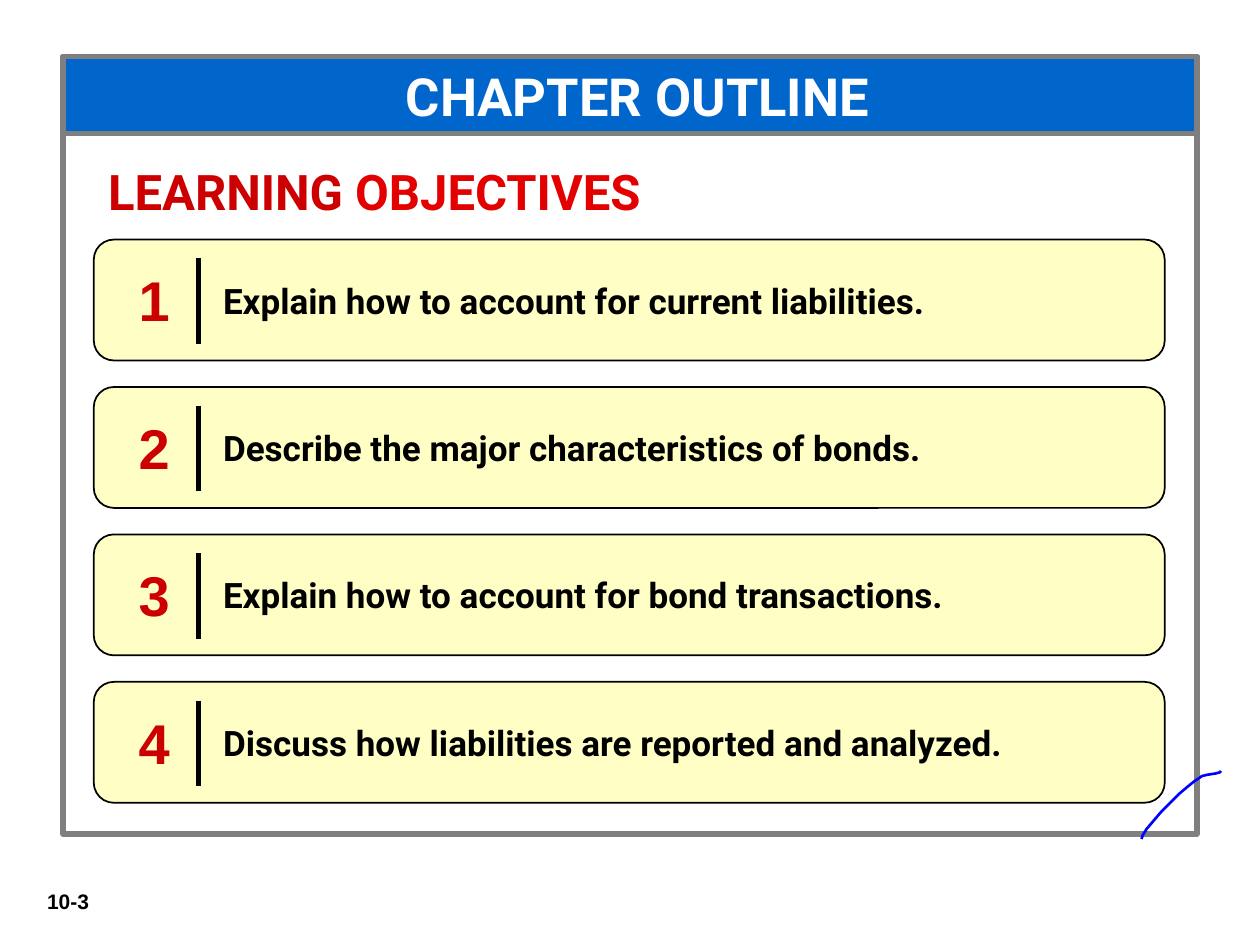
from lxml import etree
from pptx import Presentation
from pptx import util as u
from pptx.dml.color import RGBColor
from pptx.enum import shapes, text
from pptx.oxml.ns import qn

Pt = u.Pt
COLORS = {"black": "000000", "white": "FFFFFF", "blue": "0066CC", "gray": "7F7F7F",
          "cream": "FFFFC5", "red": "CC0000", "bright_red": "E20000", "ink": "0000FF"}
OBJECTIVES = ["Explain how to account for current liabilities.",
              "Describe the major characteristics of bonds.",
              "Explain how to account for bond transactions.",
              "Discuss how liabilities are reported and analyzed."]
STROKE = [(697.7, 440.6), (697, 441.4), (694.8, 442), (689.8, 442.8), (686.9, 443.5),
          (684.7, 445), (682.6, 446.4), (679, 449.3), (673.9, 453.6), (668.9, 458.6),
          (663.8, 463.7), (659.5, 468.7), (655.2, 473.8), (653, 477.4), (652.3, 479.5)]
FIRST_TOP, PITCH, CARD_HEIGHT = 136.9, 84.25, 69.1


def color(name):
    return RGBColor.from_string(COLORS[name])


def set_all(target, values):
    for attribute, value in values.items():
        setattr(target, attribute, value)


def paint(shape, fill, line, width):
    if fill:
        shape.fill.solid()
        shape.fill.fore_color.rgb = color(fill)
    else:
        shape.fill.background()
    shape.line.color.rgb = color(line)
    shape.line.width = Pt(width)


def write(shape, runs, size, font="Roboto", align=text.PP_ALIGN.LEFT, indent=0,
          anchor=text.MSO_ANCHOR.TOP):
    frame = shape.text_frame
    set_all(frame, {"word_wrap": True, "auto_size": text.MSO_AUTO_SIZE.NONE,
                    "vertical_anchor": anchor})
    paragraph = frame.paragraphs[0]
    paragraph.alignment = align
    if indent:
        set_all_xml = paragraph._p.get_or_add_pPr()
        set_all_xml.set("marL", str(Pt(indent)))
        set_all_xml.set("indent", "0")
    for words, tone in runs:
        run = paragraph.add_run()
        run.text = words
        set_all(run.font, {"name": font, "size": Pt(size), "bold": True})
        run.font.color.rgb = color(tone)


def add_label(slide, box, runs, size, **style):
    label = slide.shapes.add_textbox(*map(Pt, box))
    write(label, runs, size, **style)


def add_box(slide, kind, box, fill, line, width):
    panel = slide.shapes.add_shape(kind, *map(Pt, box))
    panel.shadow.inherit = False
    paint(panel, fill, line, width)
    return panel


def add_divider(slide, x, top, bottom):
    divider = slide.shapes.add_connector(shapes.MSO_CONNECTOR.STRAIGHT,
                                         Pt(x), Pt(top), Pt(x), Pt(bottom))
    divider.line.color.rgb = color("black")
    divider.line.width = Pt(3)
    etree.SubElement(divider._element.spPr, qn("a:effectLst"))


def add_objective(slide, number, objective):
    top = FIRST_TOP + (number - 1) * PITCH
    card = add_box(slide, shapes.MSO_SHAPE.ROUNDED_RECTANGLE,
                   (53.6, top, 612, CARD_HEIGHT), "cream", "black", 1)
    write(card, [(objective, "black")], 20, indent=63.4, anchor=text.MSO_ANCHOR.MIDDLE)
    add_divider(slide, 113.6, top + 10.7, top + 59.7)
    add_label(slide, (66.2, top + 11.5, 43.9, 46.1), [(str(number), "red")], 32,
              font="Arial", align=text.PP_ALIGN.CENTER)


def add_title(slide):
    title = slide.shapes.title
    set_all(title, {"left": Pt(36), "top": Pt(32.4), "width": Pt(648), "height": Pt(43.9)})
    paint(title, "blue", "gray", 3)
    write(title, [("CHAPTER OUTLINE", "white")], 30, align=text.PP_ALIGN.CENTER,
          indent=8.6, anchor=text.MSO_ANCHOR.MIDDLE)


def add_stroke(slide):
    points = [(Pt(x), Pt(y)) for x, y in STROKE]
    builder = slide.shapes.build_freeform(*points[0])
    builder.add_line_segments(points[1:], close=False)
    stroke = builder.convert_to_shape()
    stroke.shadow.inherit = False
    paint(stroke, None, "ink", 1.5)


def main():
    """Build the chapter outline slide."""
    deck = Presentation()
    set_all(deck, {"slide_width": Pt(720), "slide_height": Pt(540)})
    slide = deck.slides.add_slide(deck.slide_layouts[5])
    add_title(slide)
    add_box(slide, shapes.MSO_SHAPE.RECTANGLE, (36, 32.4, 648, 444.2), None, "gray", 3)
    add_label(slide, (46.1, 88.6, 408.2, 38.2),
              [("LEARNING", "red"), (" OBJECTIVES", "bright_red")], 28, indent=8.6)
    for number, objective in enumerate(OBJECTIVES, 1):
        add_objective(slide, number, objective)
    add_label(slide, (5.8, 504, 66.2, 21.6), [("10-3", "black")], 12,
              font="Arial", align=text.PP_ALIGN.CENTER, anchor=text.MSO_ANCHOR.MIDDLE)
    add_stroke(slide)
    deck.save("out.pptx")


if __name__ == "__main__":
    main()
